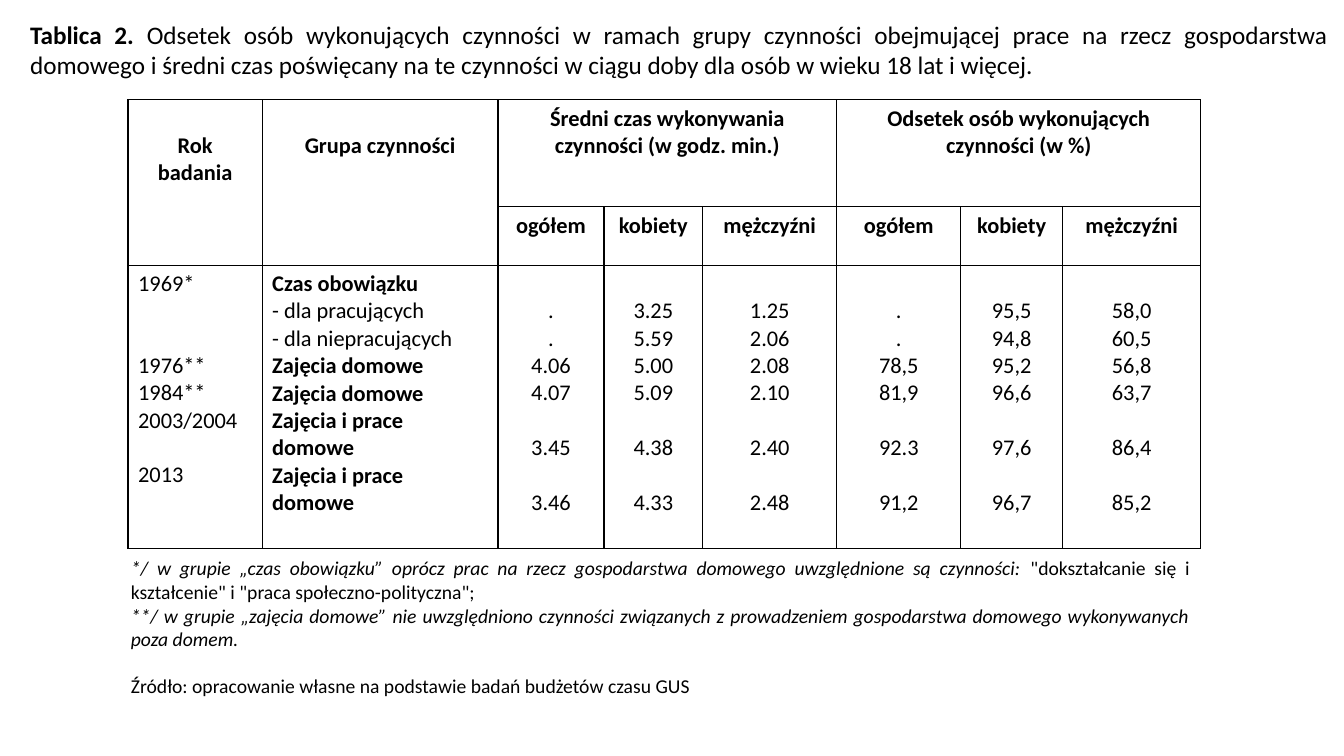
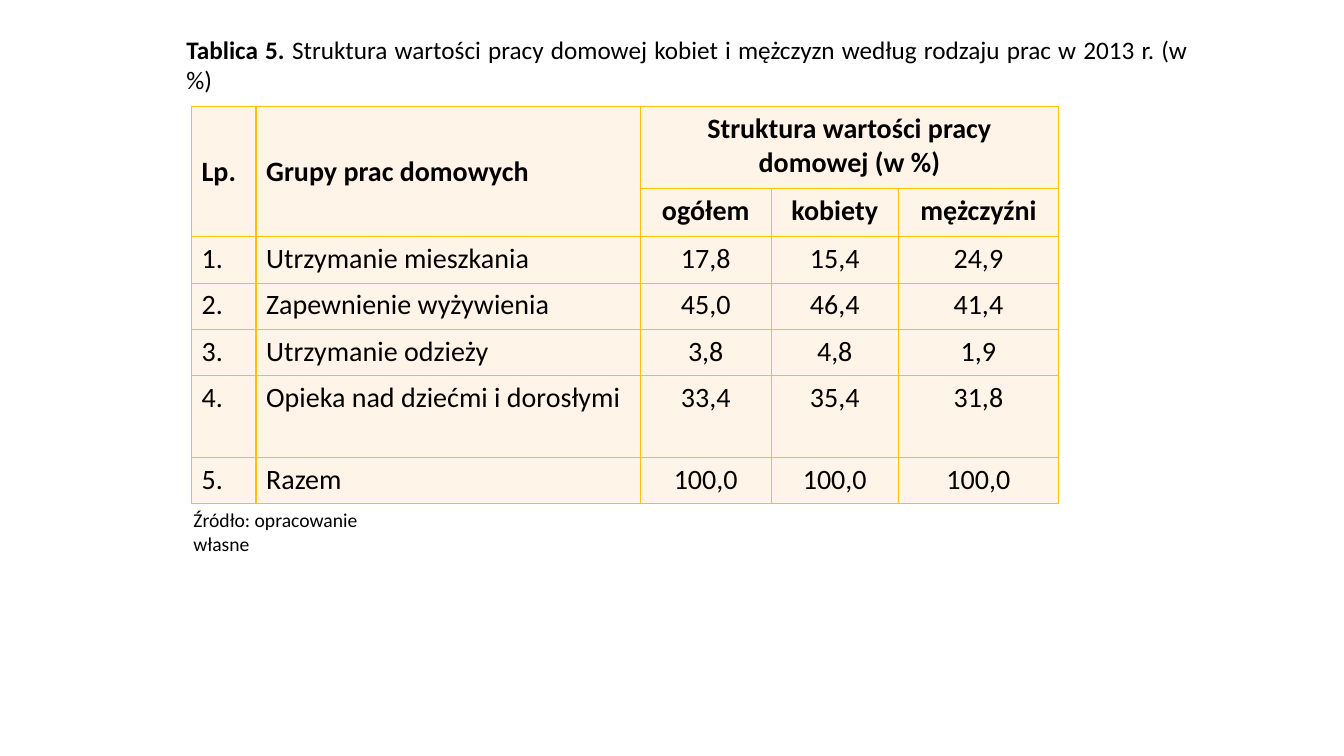
from lxml import etree
from pptx import Presentation
from pptx import util as u
from pptx.dml.color import RGBColor
from pptx.enum import text
from pptx.oxml import ns

FONT = "Calibri"
BLACK = RGBColor(0x00, 0x00, 0x00)
GOLD = RGBColor(0xFF, 0xC0, 0x00)
CREAM = RGBColor(0xFF, 0xF4, 0xE7)
LINE_SPACING = 1.22
CAPTION_SIZE, NOTE_SIZE = 18, 14
AL = text.PP_ALIGN
HEADER_ROWS = 2
LABEL_COLS = 2
OPEN_SIDES = ("lnB", "lnT")


def format_run(r, size, bold=False, italic=False):
    r.font.name = FONT
    r.font.size = u.Pt(size)
    r.font.bold = bold
    r.font.italic = italic
    r.font.color.rgb = BLACK


def add_text(s, box, paragraphs, size, align=AL.JUSTIFY):
    sp = s.shapes.add_textbox(*map(u.Inches, box))
    tf = sp.text_frame
    tf.word_wrap = True
    for i, runs in enumerate(paragraphs):
        p = tf.paragraphs[0] if i == 0 else tf.add_paragraph()
        p.alignment = align
        for content, style in runs:
            r = p.add_run()
            r.text = content
            format_run(r, size, **style)
    return tf


def add_caption(s, box, label, title):
    add_text(s, box, [[(label, {"bold": True}), (title, {})]], CAPTION_SIZE)


def set_borders(cell, color, open_side=None):
    tc_pr = cell._tc.get_or_add_tcPr()
    for side in ("lnL", "lnR", "lnT", "lnB"):
        ln = etree.SubElement(tc_pr, ns.qn(f"a:{side}"), w=str(u.Pt(1)))
        if side == open_side:
            etree.SubElement(ln, ns.qn("a:noFill"))
        else:
            fill = etree.SubElement(ln, ns.qn("a:solidFill"))
            etree.SubElement(fill, ns.qn("a:srgbClr"), val=str(color))


def fill_cell(cell, lines, size, bold, align):
    line = size * LINE_SPACING
    tf = cell.text_frame
    gap, first = 0, True
    for content in lines:
        if not content:
            gap += line
            continue
        p = tf.paragraphs[0] if first else tf.add_paragraph()
        if first:
            cell.margin_top = u.Inches(0.05) + u.Pt(gap)
        elif gap:
            p.space_before = u.Pt(round(gap, 1))
        p.text = content
        p.alignment = align
        format_run(p.runs[0], size, bold)
        gap, first = 0, False


def add_grid(s, left, top, cols, heights, rows, merges, size, border,
             fill=None, center_header=False, open_labels=False):
    box = (left, top, sum(cols), sum(heights))
    tbl = s.shapes.add_table(len(rows), len(cols), *map(u.Inches, box)).table
    tbl.first_row = tbl.horz_banding = False
    for col, width in zip(tbl.columns, cols):
        col.width = u.Inches(width)
    for row, height in zip(tbl.rows, heights):
        row.height = u.Inches(height)
    for i, row in enumerate(rows):
        header = i < HEADER_ROWS
        for j, content in enumerate(row):
            cell = tbl.cell(i, j)
            is_open = open_labels and header and j < LABEL_COLS
            set_borders(cell, border, OPEN_SIDES[i] if is_open else None)
            if fill is None:
                cell.fill.background()
            else:
                cell.fill.solid()
                cell.fill.fore_color.rgb = fill
            if content is None:
                continue
            lines = [content] if isinstance(content, str) else content
            centered = j >= LABEL_COLS or (header and center_header)
            fill_cell(cell, lines, size, header, AL.CENTER if centered else AL.LEFT)
    for r1, c1, r2, c2 in merges:
        tbl.cell(r1, c1).merge(tbl.cell(r2, c2))
    return tbl


def time_use_table(s, left, top):
    groups = ["ogółem", "kobiety", "mężczyźni"]
    series = [
        (".", ".", "4.06", "4.07", "3.45", "3.46"),
        ("3.25", "5.59", "5.00", "5.09", "4.38", "4.33"),
        ("1.25", "2.06", "2.08", "2.10", "2.40", "2.48"),
        (".", ".", "78,5", "81,9", "92.3", "91,2"),
        ("95,5", "94,8", "95,2", "96,6", "97,6", "96,7"),
        ("58,0", "60,5", "56,8", "63,7", "86,4", "85,2"),
    ]
    years = ["1969*", "", "", "1976**", "1984**", "2003/2004", "", "2013"]
    activities = ["Czas obowiązku", "- dla pracujących", "- dla niepracujących",
                  "Zajęcia domowe", "Zajęcia domowe",
                  "Zajęcia i prace domowe", "Zajęcia i prace domowe"]
    rows = [
        [["", "Rok badania"], ["", "Grupa czynności"],
         "Średni czas wykonywania czynności (w godz. min.)", None, None,
         "Odsetek osób wykonujących czynności (w %)", None, None],
        [None, None] + groups * 2,
        [years, activities] + [["", *v[:4], "", v[4], "", v[5]] for v in series],
    ]
    merges = [(0, 2, 0, 4), (0, 5, 0, 7)]
    tbl = add_grid(s, left, top, [1.33, 2.34, 1.05, 0.98, 1.33, 1.23, 1.01, 1.37],
                   [1.06, 0.58, 2.81], rows, merges, 16, BLACK,
                   center_header=True, open_labels=True)
    for p in tbl.cell(2, 1).text_frame.paragraphs:
        p.runs[0].font.bold = not p.text.startswith("-")


def work_value_table(s, left, top):
    rows = [
        ["Lp.", "Grupy prac domowych", "Struktura wartości pracy domowej (w %)", None, None],
        [None, None, "ogółem", "kobiety", "mężczyźni"],
        ["1.", "Utrzymanie mieszkania", "17,8", "15,4", "24,9"],
        ["2.", "Zapewnienie wyżywienia", "45,0", "46,4", "41,4"],
        ["3.", "Utrzymanie odzieży", "3,8", "4,8", "1,9"],
        ["4.", "Opieka nad dziećmi i dorosłymi", "33,4", "35,4", "31,8"],
        ["5.", "Razem", "100,0", "100,0", "100,0"],
    ]
    merges = [(0, 0, 1, 0), (0, 1, 1, 1), (0, 2, 0, 4)]
    tbl = add_grid(s, left, top, [0.64, 3.81, 1.3, 1.26, 1.59],
                   [0.81, 0.48, 0.46, 0.46, 0.46, 0.81, 0.46],
                   rows, merges, 20, GOLD, CREAM)
    for j in range(LABEL_COLS):
        tbl.cell(0, j).vertical_anchor = text.MSO_ANCHOR.MIDDLE


def time_use_slide(s):
    add_caption(s, (0.2, 0.14, 13.07, 0.71), "Tablica 2. ",
                "Odsetek osób wykonujących czynności w ramach grupy czynności obejmującej "
                "prace na rzecz gospodarstwa domowego i średni czas poświęcany na te "
                "czynności w ciągu doby dla osób w wieku 18 lat i więcej.")
    time_use_table(s, 1.27, 0.99)
    italic = {"italic": True}
    notes = [
        [("*/ w grupie „czas obowiązku” oprócz prac na rzecz gospodarstwa domowego "
          "uwzględnione są czynności: ", italic),
         ('"dokształcanie się i kształcenie" i "praca społeczno-polityczna";', {})],
        [("**/ w grupie „zajęcia domowe” nie uwzględniono czynności związanych z "
          "prowadzeniem gospodarstwa domowego wykonywanych poza domem.", italic)],
        [("Źródło: opracowanie własne na podstawie badań budżetów czasu GUS", {})],
    ]
    tf = add_text(s, (1.2, 5.47, 10.7, 1.51), notes, NOTE_SIZE)
    tf.paragraphs[-1].space_before = u.Pt(17)


def work_value_slide(s):
    add_caption(s, (1.75, 0.29, 10.13, 0.71), "Tablica 5. ",
                "Struktura wartości pracy domowej kobiet i mężczyzn według rodzaju prac "
                "w 2013 r. (w %)")
    work_value_table(s, 1.9, 1.06)
    add_text(s, (1.82, 4.99, 2.3, 0.57), [[("Źródło: opracowanie własne", {})]],
             NOTE_SIZE, AL.LEFT)


def main():
    prs = Presentation()
    prs.slide_width, prs.slide_height = u.Inches(13.33), u.Inches(7.5)
    for build in (time_use_slide, work_value_slide):
        build(prs.slides.add_slide(prs.slide_layouts[6]))
    prs.save("out.pptx")


if __name__ == "__main__":
    main()
